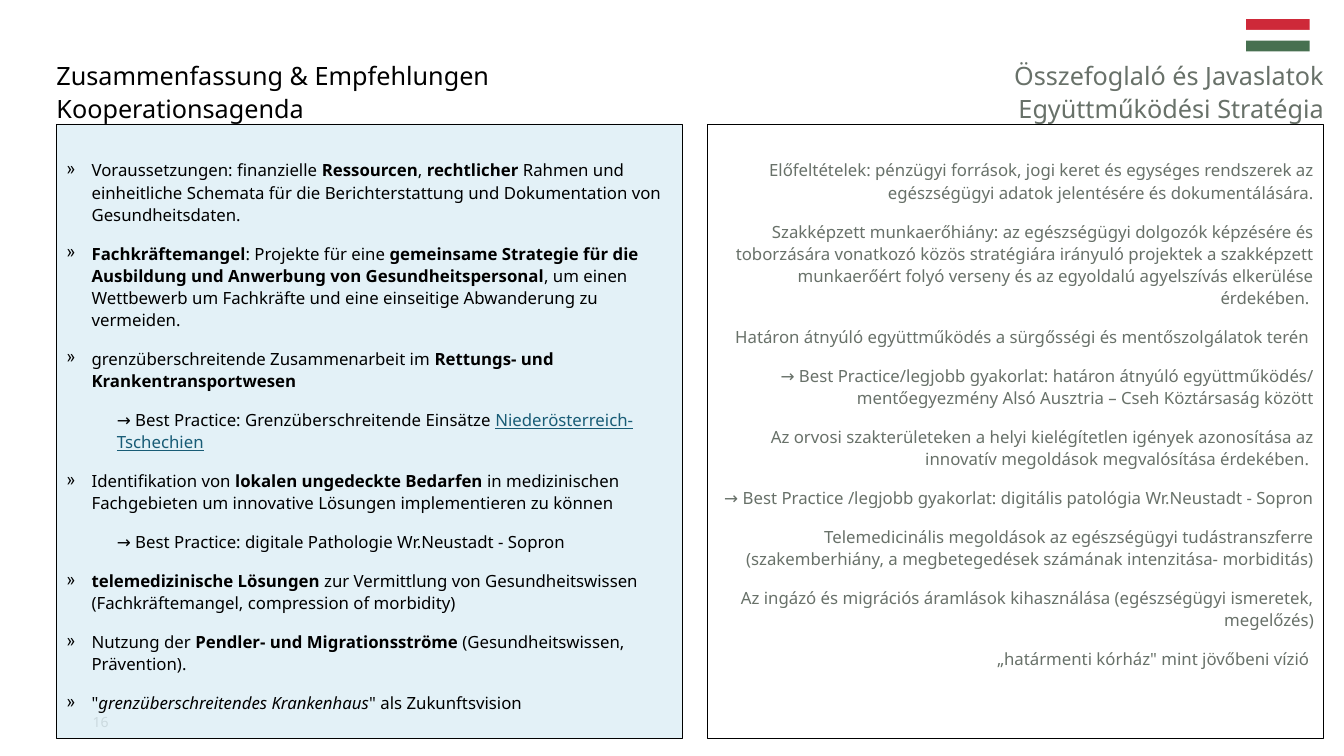
from lxml import etree
from pptx import Presentation
from pptx.dml.color import RGBColor
from pptx.enum.shapes import MSO_SHAPE
from pptx.enum.text import MSO_ANCHOR, MSO_AUTO_SIZE, PP_ALIGN
from pptx.oxml.ns import qn
from pptx.util import Inches, Pt

RECTANGLE = MSO_SHAPE.RECTANGLE
TOP, MIDDLE = MSO_ANCHOR.TOP, MSO_ANCHOR.MIDDLE
NO_AUTOFIT = MSO_AUTO_SIZE.NONE
LEFT, RIGHT = PP_ALIGN.LEFT, PP_ALIGN.RIGHT

FONT = "Noto Sans"
BLACK = RGBColor(0x00, 0x00, 0x00)
GREY = RGBColor(0x68, 0x71, 0x69)
NUMBER_GREY = RGBColor(0x8C, 0x8C, 0x8C)
PALE_BLUE = RGBColor(0xDC, 0xEE, 0xF5)
LINK_BLUE = RGBColor(0x18, 0x5C, 0x76)
FLAG_COLOURS = (RGBColor(0xCE, 0x29, 0x39), RGBColor(0xFF, 0xFF, 0xFF),
                RGBColor(0x47, 0x70, 0x50))

# Each German point: kind, style of its marked words, text with |marked words|
POINT, EXAMPLE = "point", "example"
BOLD, ITALIC, LINK = "bold", "italic", "link"
GERMAN_AGENDA = [
    (POINT, BOLD, "Voraussetzungen: finanzielle |Ressourcen|, |rechtlicher| Rahmen und "
     "einheitliche Schemata für die Berichterstattung und Dokumentation von Gesundheitsdaten."),
    (POINT, BOLD, "|Fachkräftemangel|: Projekte für eine |gemeinsame Strategie für die "
     "Ausbildung und Anwerbung von Gesundheitspersonal|, um einen Wettbewerb um Fachkräfte "
     "und eine einseitige Abwanderung zu vermeiden."),
    (POINT, BOLD, "grenzüberschreitende Zusammenarbeit im "
     "|Rettungs- und Krankentransportwesen|"),
    (EXAMPLE, LINK, "→ Best Practice: Grenzüberschreitende Einsätze "
     "|Niederösterreich-Tschechien|"),
    (POINT, BOLD, "Identifikation von |lokalen ungedeckte Bedarfen |in medizinischen "
     "Fachgebieten um innovative Lösungen implementieren zu können"),
    (EXAMPLE, LINK, "→ Best Practice: digitale Pathologie Wr.Neustadt - Sopron"),
    (POINT, BOLD, "|telemedizinische Lösungen |zur Vermittlung von Gesundheitswissen "
     "(Fachkräftemangel, compression of morbidity)"),
    (POINT, BOLD, "Nutzung der |Pendler- und Migrationsströme |"
     "(Gesundheitswissen, Prävention)."),
    (POINT, ITALIC, '"|grenzüberschreitendes Krankenhaus|" als Zukunftsvision'),
]
HUNGARIAN_AGENDA = [
    "Előfeltételek: pénzügyi források, jogi keret és egységes rendszerek az egészségügyi "
    "adatok jelentésére és dokumentálására.",
    "Szakképzett munkaerőhiány: az egészségügyi dolgozók képzésére és toborzására vonatkozó "
    "közös stratégiára irányuló projektek a szakképzett munkaerőért folyó verseny és az "
    "egyoldalú agyelszívás elkerülése érdekében. ",
    "Határon átnyúló együttműködés a sürgősségi és mentőszolgálatok terén ",
    "→ Best Practice/legjobb gyakorlat: határon átnyúló együttműködés/ mentőegyezmény "
    "Alsó Ausztria – Cseh Köztársaság között",
    "Az orvosi szakterületeken a helyi kielégítetlen igények azonosítása az innovatív "
    "megoldások megvalósítása érdekében. ",
    "→ Best Practice /legjobb gyakorlat: digitális patológia Wr.Neustadt - Sopron",
    "Telemedicinális megoldások az egészségügyi tudástranszferre (szakemberhiány, a "
    "megbetegedések számának intenzitása- morbiditás)",
    "Az ingázó és migrációs áramlások kihasználása (egészségügyi ismeretek, megelőzés)",
    '„határmenti kórház" mint jövőbeni vízió ',
]


def set_indent(paragraph, margin, first_line, bullet=None):
    properties = paragraph._p.get_or_add_pPr()
    properties.set("marL", str(Inches(margin)))
    properties.set("indent", str(Inches(first_line)))
    if bullet:
        etree.SubElement(properties, qn("a:buChar")).set("char", bullet)


def format_paragraph(paragraph, size, colour, align):
    paragraph.alignment = align
    paragraph.line_spacing = 1.1
    for run in paragraph.runs:
        run.font.name, run.font.size = FONT, Pt(size)
        run.font.color.rgb = colour


def fill_label(label, box, text, size, colour, align=LEFT):
    """Headings and page number: unpadded text centred vertically in its box."""
    label.left, label.top, label.width, label.height = map(Inches, box)
    frame = label.text_frame
    frame.text = text
    frame.word_wrap, frame.auto_size = True, NO_AUTOFIT
    frame.vertical_anchor = MIDDLE
    frame.margin_left = frame.margin_right = frame.margin_top = frame.margin_bottom = 0
    format_paragraph(frame.paragraphs[0], size, colour, align)


def add_block(slide, box, colour):
    block = slide.shapes.add_shape(RECTANGLE, *map(Inches, box))
    block.shadow.inherit = False
    block.line.fill.background()
    block.fill.solid()
    block.fill.fore_color.rgb = colour
    return block


def add_panel(slide, box, colour=None):
    """Outlined panel; returns its text frame."""
    panel = add_block(slide, box, colour or PALE_BLUE)
    if colour:
        alpha = panel.fill._xPr.find(".//" + qn("a:srgbClr"))
        etree.SubElement(alpha, qn("a:alpha")).set("val", "79000")
    else:
        panel.fill.background()
    panel.line.color.rgb = BLACK
    panel.line.width = Pt(0.5)
    frame = panel.text_frame
    frame.word_wrap, frame.vertical_anchor = True, TOP
    frame.margin_top = Inches(0.34)
    return frame


def next_paragraph(frame, index):
    if index == 0:
        return frame.paragraphs[0]
    paragraph = frame.add_paragraph()
    paragraph.space_before = Pt(12)
    return paragraph


def add_german_panel(slide, box):
    frame = add_panel(slide, box, PALE_BLUE)
    for index, (kind, style, text) in enumerate(GERMAN_AGENDA):
        paragraph = next_paragraph(frame, index)
        if kind == POINT:
            set_indent(paragraph, 0.25, -0.25, "»")
        else:
            paragraph.level = 1
            set_indent(paragraph, 0.5, 0)
        marked_runs = []
        for position, words in enumerate(text.split("|")):
            if words:
                run = paragraph.add_run()
                run.text = words
                if position % 2:
                    marked_runs.append(run)
        format_paragraph(paragraph, 12, BLACK, LEFT)
        for run in marked_runs:
            if style == BOLD:
                run.font.bold = True
            elif style == ITALIC:
                run.font.italic = True
            else:
                run.font.underline = True
                run.font.color.rgb = LINK_BLUE


def add_hungarian_panel(slide, box):
    frame = add_panel(slide, box)
    for index, text in enumerate(HUNGARIAN_AGENDA):
        paragraph = next_paragraph(frame, index)
        paragraph.text = text
        format_paragraph(paragraph, 12, GREY, RIGHT)


def add_flag(slide, left, top, width, height):
    stripe = height / len(FLAG_COLOURS)
    for index, colour in enumerate(FLAG_COLOURS):
        add_block(slide, (left, top + index * stripe, width, stripe), colour)


def main():
    deck = Presentation()
    deck.slide_width, deck.slide_height = Inches(13.33), Inches(7.5)
    slide = deck.slides.add_slide(deck.slide_layouts[5])

    # German title and page number
    fill_label(slide.shapes.title, (0.56, 0.56, 5.7, 0.67),
               "Zusammenfassung & Empfehlungen\vKooperationsagenda", 18, BLACK)
    page_number = slide.shapes.add_textbox(0, 0, 0, 0)
    fill_label(page_number, (0.92, 6.95, 0.64, 0.4), "16", 10, NUMBER_GREY)

    # Agenda panels
    add_german_panel(slide, (0.56, 1.23, 6.21, 6.1))
    add_hungarian_panel(slide, (7.02, 1.23, 6.11, 6.1))

    # Hungarian heading and flag
    hungarian_heading = slide.shapes.add_textbox(0, 0, 0, 0)
    fill_label(hungarian_heading, (7.43, 0.56, 5.7, 0.67),
               "Összefoglaló és Javaslatok\vEgyüttműködési Stratégia", 18, GREY, RIGHT)
    add_flag(slide, 12.36, 0.19, 0.63, 0.32)

    deck.save("out.pptx")


if __name__ == "__main__":
    main()
